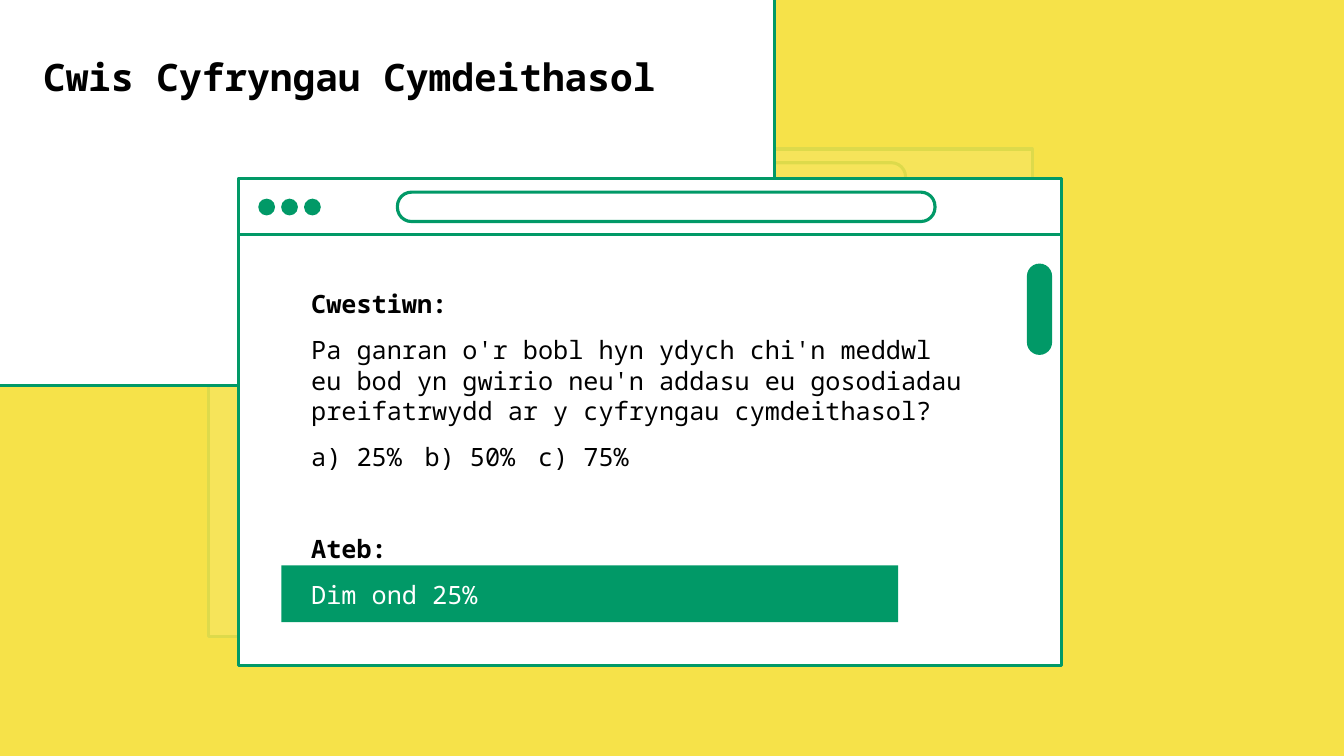
from lxml.etree import SubElement as Sub
from pptx import Presentation
from pptx.dml.color import RGBColor
from pptx.enum.shapes import MSO_SHAPE as Form
from pptx.oxml.ns import qn
from pptx.util import Pt

GREEN = RGBColor(0x01, 0x99, 0x67)
YELLOW = RGBColor(0xF6, 0xE2, 0x49)
WHITE = RGBColor(0xFF, 0xFF, 0xFF)
BLACK = RGBColor(0x00, 0x00, 0x00)


class Page:
    """Draw the quiz slide in one shared style, with lengths in points."""

    font = "Noto Sans Mono"

    def __init__(self, slide):
        self.slide = slide
        back = slide.background.fill
        back.solid()
        back.fore_color.rgb = YELLOW

    def shape(self, form, box, fill=None, line=None, round=None):
        item = self.slide.shapes.add_shape(form, *map(Pt, box))
        item.shadow.inherit = False
        if fill is None:
            item.fill.background()
        else:
            item.fill.solid()
            item.fill.fore_color.rgb = fill
        if line is None:
            item.line.fill.background()
        else:
            item.line.color.rgb = GREEN
            item.line.width = Pt(line)
        if round is not None:
            item.adjustments[0] = round
        return item

    def veil(self, box, alpha):
        item = self.shape(Form.RECTANGLE, box, YELLOW)
        color = item.fill._xPr.find(qn("a:solidFill"))[0]
        Sub(color, qn("a:alpha"), val=str(alpha * 1000))

    def window(self, x, y):
        self.shape(Form.RECTANGLE, (x, y, 784, 464), WHITE, 3)
        self.shape(Form.RECTANGLE, (x, y, 784, 53), WHITE, 3)
        self.shape(Form.ROUNDED_RECTANGLE, (x + 151.5, y + 13, 512, 28), None, 3, 0.48)

    def text(self, box, lines, size=24, inset=(9.4, 5), lead=None, after=0):
        frame = self.slide.shapes.add_textbox(*map(Pt, box)).text_frame
        frame.word_wrap = True
        frame.margin_left = frame.margin_right = Pt(inset[0])
        frame.margin_top = frame.margin_bottom = Pt(inset[1])
        for i, (words, bold, color) in enumerate(lines):
            para = frame.add_paragraph() if i else frame.paragraphs[0]
            para.add_run().text = words
            para.space_after = Pt(after)
            if lead:
                para.line_spacing = Pt(lead)
            para.font.name = self.font
            para.font.size = Pt(size)
            para.font.bold = bold
            para.font.color.rgb = color


def main():
    deck = Presentation()
    deck.slide_width, deck.slide_height = Pt(1280), Pt(720)
    page = Page(deck.slides.add_slide(deck.slide_layouts[6]))

    page.window(199, 142)
    page.veil((0, 0, 1280, 720), 90)
    page.shape(Form.RECTANGLE, (-46, -18, 784, 385), WHITE, 2.75)
    page.text((34, 48, 626, 42), [("Cwis Cyfryngau Cymdeithasol", True, BLACK)],
              36, (7.2, 3.6))

    page.window(227, 170)
    page.shape(Form.ROUNDED_RECTANGLE, (978, 251, 24, 87), GREEN, round=0.5)
    for i in range(3):
        page.shape(Form.OVAL, (246 + 21.8 * i, 189.2, 16, 16), GREEN)

    quiz = [
        ("Cwestiwn:", True, BLACK),
        ("Pa ganran o'r bobl hyn ydych chi'n meddwl eu bod yn gwirio neu'n addasu "
         "eu gosodiadau preifatrwydd ar y cyfryngau cymdeithasol?", False, BLACK),
        ("a) 25%\tb) 50%\tc) 75%", False, BLACK),
    ]
    reply = [("Ateb:", True, BLACK), ("Dim ond 25%", False, WHITE)]
    page.text((287, 270, 645, 189), quiz, lead=28.8, after=15)
    page.shape(Form.RECTANGLE, (268, 538.5, 587.5, 54), GREEN)
    page.text((287, 502.5, 645, 78), reply, lead=28.8, after=15)
    deck.save("out.pptx")


if __name__ == "__main__":
    main()
